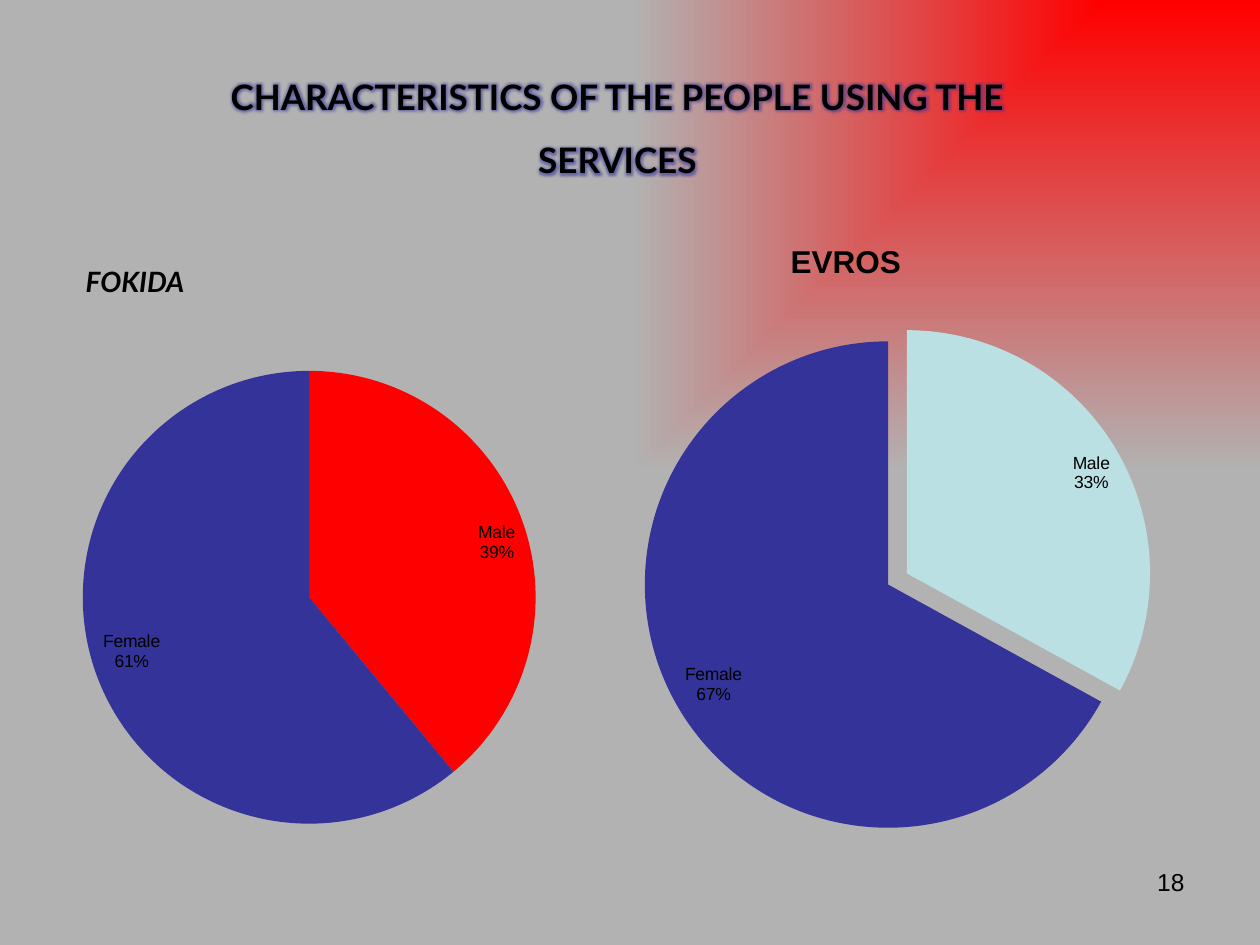
from lxml import etree
from pptx import Presentation
from pptx.chart.data import CategoryChartData
from pptx.dml.color import RGBColor
from pptx.enum.chart import XL_CHART_TYPE, XL_LABEL_POSITION
from pptx.enum.text import MSO_ANCHOR, MSO_AUTO_SIZE, PP_ALIGN
from pptx.oxml import parse_xml
from pptx.oxml.ns import nsdecls, qn
from pptx.util import Inches, Pt

PIE = XL_CHART_TYPE.PIE
INSIDE_END = XL_LABEL_POSITION.INSIDE_END
TOP, MIDDLE = MSO_ANCHOR.TOP, MSO_ANCHOR.MIDDLE
LEFT, CENTER, RIGHT = PP_ALIGN.LEFT, PP_ALIGN.CENTER, PP_ALIGN.RIGHT
NO_FIT = MSO_AUTO_SIZE.NONE

COLORS = {"black": "000000", "red": "FF0000", "grey": "B2B2B2",
          "navy": "333399", "pale": "BBE0E3"}
TITLE = "CHARACTERISTICS OF THE PEOPLE USING THE SERVICES"
REGION = "FOKIDA"
PAGE = "18"
CATEGORIES = ("Male", "Female")
CHARTS = [
    {"box": (0.5, 2.17, 3.87, 4.55), "values": (39, 61), "fills": ("red", "navy"),
     "plot": (0.04, 0.17, 0.93, 0.79), "title": None, "explosion": 0},
    {"box": (4.83, 1.67, 4.67, 4.95), "values": (33, 67), "fills": ("pale", "navy"),
     "plot": (0.06, 0.21, 0.83, 0.78), "title": "EVROS", "title_at": (0.3, 0.04),
     "explosion": 9},
]


def rgb(name):
    return RGBColor.from_string(COLORS[name])


def style(font, size, name, bold=False, italic=False):
    font.size, font.name = Pt(size), name
    font.bold, font.italic = bold, italic
    font.color.rgb = rgb("black")


def place(sp, box):
    sp.left, sp.top, sp.width, sp.height = map(Inches, box)


def write(sp, text, align, anchor, size, font, **kw):
    tf = sp.text_frame
    tf.word_wrap, tf.auto_size, tf.vertical_anchor = True, NO_FIT, anchor
    p = tf.paragraphs[0]
    p.text, p.alignment = text, align
    style(p.font, size, font, **kw)
    return p


def set_background(slide):
    stops = "".join(f'<a:gs pos="{pos}"><a:srgbClr val="{COLORS[name]}"/></a:gs>'
                    for pos, name in ((0, "red"), (100000, "grey")))
    bg = parse_xml(
        f'<p:bg {nsdecls("p", "a")}><p:bgPr><a:gradFill rotWithShape="0">'
        f'<a:gsLst>{stops}</a:gsLst><a:path path="rect">'
        '<a:fillToRect l="100000" b="100000"/></a:path></a:gradFill>'
        '<a:effectLst/></p:bgPr></p:bg>')
    slide.element.cSld.insert(0, bg)


def add_glow(run):
    run.font.color.rgb = rgb("black")
    fill = run.font._element.find(qn("a:solidFill"))
    fill.addnext(parse_xml(
        f'<a:effectLst {nsdecls("a")}><a:glow rad="63500">'
        f'<a:srgbClr val="{COLORS["navy"]}"><a:alpha val="60000"/></a:srgbClr>'
        '</a:glow></a:effectLst>'))


def make_layout(values, inner=False):
    layout = etree.Element(qn("c:layout"))
    manual = etree.SubElement(layout, qn("c:manualLayout"))
    pairs = [("layoutTarget", "inner")] if inner else []
    pairs += [("xMode", "edge"), ("yMode", "edge")] + list(zip("xywh", values))
    for tag, value in pairs:
        etree.SubElement(manual, qn(f"c:{tag}")).set("val", str(value))
    return layout


def clear_layout(parent):
    for old in parent.findall(qn("c:layout")):
        parent.remove(old)


def add_pie(slide, spec):
    data = CategoryChartData()
    data.categories = CATEGORIES
    data.add_series("Series 1", spec["values"])
    chart = slide.shapes.add_chart(PIE, *map(Inches, spec["box"]), data).chart
    style(chart.font, 10, "Arial")
    chart.has_legend = False
    chart.has_title = spec["title"] is not None
    if chart.has_title:
        p = chart.chart_title.text_frame.paragraphs[0]
        p.text = spec["title"]
        style(p.runs[0].font, 18, "Arial", bold=True)
        title = chart.chart_title._element
        clear_layout(title)
        title.find(qn("c:tx")).addnext(make_layout(spec["title_at"]))
    plot = chart.plots[0]
    plot.vary_by_categories = True
    area = plot._element.getparent()
    clear_layout(area)
    area.insert(0, make_layout(spec["plot"], inner=True))

    series = plot.series[0]
    for i, name in enumerate(spec["fills"]):
        fmt = series.points[i].format
        fmt.fill.solid()
        fmt.fill.fore_color.rgb = rgb(name)
        fmt.line.fill.background()
    if spec["explosion"]:
        sppr = series._element.find(qn("c:dPt")).find(qn("c:spPr"))
        explosion = etree.Element(qn("c:explosion"))
        explosion.set("val", str(spec["explosion"]))
        sppr.addprevious(explosion)

    plot.has_data_labels = True
    labels = plot.data_labels
    labels.show_value = False
    labels.show_category_name = labels.show_percentage = True
    labels.number_format, labels.number_format_is_linked = "0%", False
    labels.position = INSIDE_END
    style(labels.font, 10, "Arial")
    separator = etree.Element(qn("c:separator"))
    separator.text = "\n"
    labels._element.find(qn("c:showBubbleSize")).addnext(separator)


def main():
    prs = Presentation()
    prs.slide_width, prs.slide_height = Inches(10), Inches(7.5)
    slide = prs.slides.add_slide(prs.slide_layouts[0])
    set_background(slide)

    title, subtitle = slide.placeholders
    place(title, (1.69, 0.42, 6.42, 1.02))
    p = write(title, TITLE, CENTER, MIDDLE, 20, "Lato", bold=True)
    p.line_spacing = 1.5
    add_glow(p.runs[0])

    place(subtitle, (0.58, 1.92, 9, 4.67))
    p = write(subtitle, REGION, LEFT, TOP, 16, "Lato", bold=True, italic=True)
    p.line_spacing, p.space_before = 1.5, Pt(3.2)

    for spec in CHARTS:
        add_pie(slide, spec)

    number = slide.shapes.add_textbox(*map(Inches, (7.17, 6.83, 2.33, 0.52)))
    write(number, PAGE, RIGHT, TOP, 14, "Arial")
    prs.save("out.pptx")


if __name__ == "__main__":
    main()
